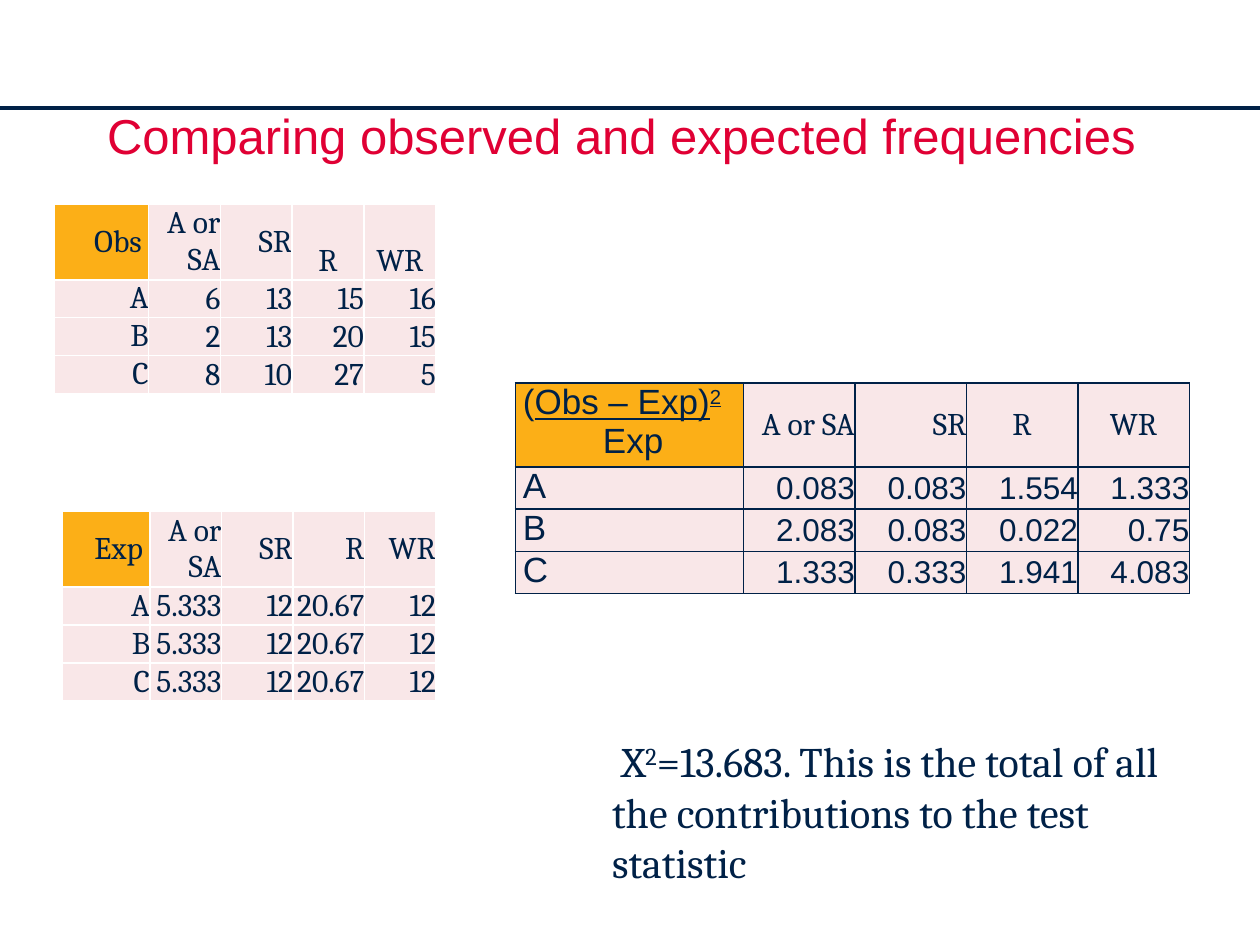
from dataclasses import dataclass

from lxml.etree import SubElement
from pptx import Presentation
from pptx.dml.color import RGBColor
from pptx.enum.shapes import MSO_CONNECTOR
from pptx.enum.text import MSO_ANCHOR as Anchor, PP_ALIGN as Align
from pptx.oxml.ns import qn
from pptx.util import Inches, Pt


@dataclass(frozen=True)
class Theme:
    navy: str = "002147"
    red: str = "E00034"
    gold: str = "FCAF17"
    blush: str = "F9E7E8"
    white: str = "FFFFFF"
    sans: str = "Arial"
    serif: str = "Cambria"
    title: int = 28
    conclusion: int = 24
    label: int = 20
    value: int = 18


THEME = Theme()

OBSERVED = [
    ["Obs ", "A or SA", "SR", "R", "WR"],
    ["A", "6", "13", "15", "16"],
    ["B", "2", "13", "20", "15"],
    ["C", "8", "10", "27", "5"],
]
EXPECTED = [["Exp ", "A or SA", "SR", "R", "WR"]] + [
    [group, "5.333", "12", "20.67", "12"] for group in "ABC"
]
CONTRIBUTIONS = [
    ["", "A or SA", "SR", "R", "WR"],
    ["A", "0.083", "0.083", "1.554", "1.333"],
    ["B", "2.083", "0.083", "0.022", "0.75"],
    ["C", "1.333", "0.333", "1.941", "4.083"],
]


def style(paragraph, face, size, color=THEME.navy, align=Align.LEFT):
    paragraph.alignment = align
    paragraph.font.name = face
    paragraph.font.size = Pt(size)
    paragraph.font.color.rgb = RGBColor.from_string(color)


def add_run(paragraph, text, raised=False, underline=None):
    run = paragraph.add_run()
    run.text = text
    run.font.underline = underline
    if raised:
        run.font._element.set("baseline", "30000")


def add_rule(slide, y):
    rule = slide.shapes.add_connector(MSO_CONNECTOR.STRAIGHT, 0, Inches(y), Inches(10), Inches(y))
    rule.line.color.rgb = RGBColor.from_string(THEME.navy)
    rule.line.width = Pt(2.25)
    SubElement(rule._element.spPr, qn("a:effectLst"))


def add_text_frame(slide, left, top, width, height, anchor=Anchor.TOP):
    frame = slide.shapes.add_textbox(*map(Inches, (left, top, width, height))).text_frame
    frame.word_wrap = True
    frame.vertical_anchor = anchor
    return frame


def set_borders(cell, color):
    properties = cell._tc.get_or_add_tcPr()
    for position, side in enumerate(("a:lnL", "a:lnR", "a:lnT", "a:lnB")):
        border = SubElement(properties, qn(side), w=str(Pt(1)))
        fill = SubElement(border, qn("a:solidFill"))
        SubElement(fill, qn("a:srgbClr"), val=color)
        properties.remove(border)
        properties.insert(position, border)


def add_frequency_table(slide, rows, place, label_width, row_heights, border, face=THEME.serif):
    left, top, width = place
    header_height, body_height = row_heights
    height = header_height + body_height * (len(rows) - 1)
    table = slide.shapes.add_table(
        len(rows), len(rows[0]), *map(Inches, (left, top, width, height))
    ).table
    value_width = (width - label_width) / (len(rows[0]) - 1)
    for index, column in enumerate(table.columns):
        column.width = Inches(value_width if index else label_width)
    for row_index, values in enumerate(rows):
        table.rows[row_index].height = Inches(body_height if row_index else header_height)
        for column_index, value in enumerate(values):
            cell = table.cell(row_index, column_index)
            cell.margin_left = cell.margin_right = cell.margin_top = cell.margin_bottom = 0
            cell.vertical_anchor = Anchor.MIDDLE
            cell.fill.solid()
            is_corner = row_index == column_index == 0
            cell.fill.fore_color.rgb = RGBColor.from_string(THEME.gold if is_corner else THEME.blush)
            set_borders(cell, border)
            cell.text = value
            style(cell.text_frame.paragraphs[0], face if row_index else THEME.serif,
                  THEME.value, align=Align.RIGHT)
    return table


def center_last_headers(table):
    for column in (3, 4):
        table.cell(0, column).text_frame.paragraphs[0].alignment = Align.CENTER


def add_observed(slide):
    table = add_frequency_table(slide, OBSERVED, (0.43, 1.62, 3.03), 0.75, (0.59, 0.3), THEME.white)
    center_last_headers(table)
    for row in range(len(OBSERVED)):
        for column in range(1 if row else 3, 5):
            table.cell(row, column).vertical_anchor = Anchor.BOTTOM


def add_contributions(slide):
    table = add_frequency_table(
        slide, CONTRIBUTIONS, (4.09, 3.04, 5.35), 1.81, (0.65, 0.31), THEME.navy, THEME.sans
    )
    center_last_headers(table)
    for row in range(len(CONTRIBUTIONS)):
        label = table.cell(row, 0)
        label.margin_left = Inches(0.06)
        label.vertical_anchor = Anchor.TOP
        style(label.text_frame.paragraphs[0], THEME.sans, THEME.label)
    formula = table.cell(0, 0).text_frame
    numerator = formula.paragraphs[0]
    add_run(numerator, "(")
    add_run(numerator, "Obs – Exp)", underline=True)
    add_run(numerator, "2", raised=True, underline=True)
    denominator = formula.add_paragraph()
    add_run(denominator, "Exp")
    style(denominator, THEME.sans, THEME.label, align=Align.CENTER)


def add_title(slide):
    title = add_text_frame(slide, 0.43, 0.76, 9, 0.63, Anchor.MIDDLE).paragraphs[0]
    add_run(title, "Comparing observed and expected frequencies")
    style(title, THEME.sans, THEME.title, THEME.red, Align.CENTER)


def add_conclusion(slide):
    conclusion = add_text_frame(slide, 4.76, 5.79, 5, 0.91).paragraphs[0]
    add_run(conclusion, " X")
    add_run(conclusion, "2", raised=True)
    add_run(conclusion, "=13.683. This is the total of all the contributions to the test statistic")
    style(conclusion, THEME.serif, THEME.conclusion)


def main():
    deck = Presentation()
    deck.slide_width, deck.slide_height = Inches(10), Inches(7.5)
    slide = deck.slides.add_slide(deck.slide_layouts[6])
    add_rule(slide, 0.86)
    add_title(slide)
    add_contributions(slide)
    add_conclusion(slide)
    add_observed(slide)
    add_frequency_table(slide, EXPECTED, (0.49, 4.06, 2.97), 0.7, (0.59, 0.3), THEME.white)
    deck.save("out.pptx")


if __name__ == "__main__":
    main()
